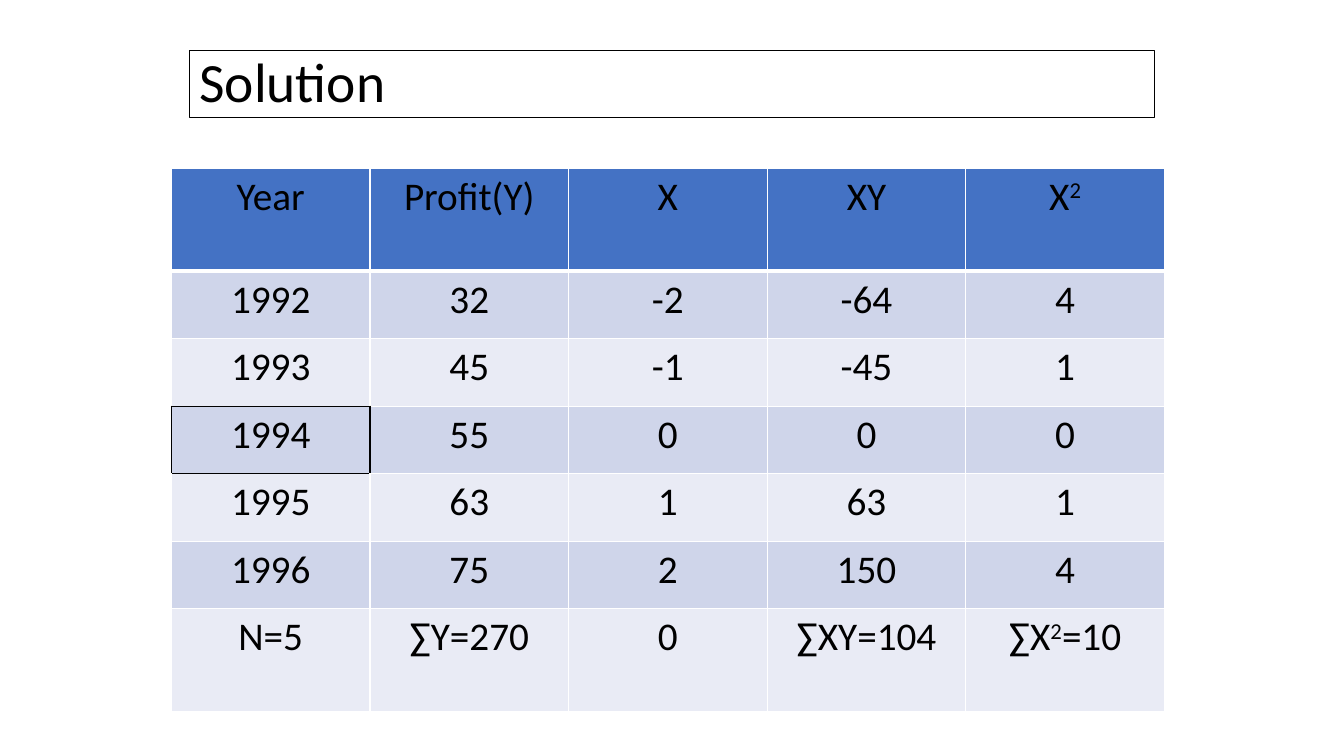
from dataclasses import dataclass

from lxml.etree import SubElement
from pptx import Presentation
from pptx.dml.color import RGBColor
from pptx.enum.text import MSO_ANCHOR, PP_ALIGN
from pptx.oxml.ns import qn
from pptx.util import Inches, Pt

BLACK = RGBColor(0x00, 0x00, 0x00)
WHITE = RGBColor(0xFF, 0xFF, 0xFF)
HEADER_BLUE = RGBColor(0x44, 0x72, 0xC4)
BAND_DARK = RGBColor(0xCF, 0xD5, 0xEA)
BAND_LIGHT = RGBColor(0xE9, 0xEB, 0xF5)

FONT = "Calibri"
COLUMN_WIDTH = 1.97
BASE_YEAR_CELL = (3, 0)
# Side of a cell -> step (row, column) to the neighbour sharing that edge
SIDES = {"lnL": (0, -1), "lnR": (0, 1), "lnT": (-1, 0), "lnB": (1, 0)}


@dataclass(frozen=True)
class TableRow:
    height: float
    fill: RGBColor
    texts: tuple[str, ...]  # "^" raises the one character after it


ROWS = [
    TableRow(1.02, HEADER_BLUE, ("Year", "Profit(Y)", "X", "XY", "X^2")),
    TableRow(0.67, BAND_DARK, ("1992", "32", "-2", "-64", "4")),
    TableRow(0.67, BAND_LIGHT, ("1993", "45", "-1", "-45", "1")),
    TableRow(0.67, BAND_DARK, ("1994", "55", "0", "0", "0")),
    TableRow(0.67, BAND_LIGHT, ("1995", "63", "1", "63", "1")),
    TableRow(0.67, BAND_DARK, ("1996", "75", "2", "150", "4")),
    TableRow(1.02, BAND_LIGHT, ("N=5", "∑Y=270", "0", "∑XY=104", "∑X^2=10")),
]


def add_run(paragraph, text: str, size: float, raised: bool = False) -> None:
    run = paragraph.add_run()
    run.text = text
    run.font.name = FONT
    run.font.size = Pt(size)
    run.font.color.rgb = BLACK
    if raised:
        run.font._element.set("baseline", "30000")


def add_title(slide) -> None:
    title = slide.shapes.add_textbox(Inches(1.88), Inches(0.5), Inches(9.57), Inches(0.67))
    title.line.color.rgb = BLACK
    title.line.width = Pt(0.75)
    frame = title.text_frame
    frame.word_wrap = True
    frame.vertical_anchor = MSO_ANCHOR.MIDDLE
    frame.paragraphs[0].line_spacing = 0.9
    add_run(frame.paragraphs[0], "Solution", 39.6)


def add_borders(cell, position: tuple[int, int]) -> None:
    """Draw white edges, black where they touch the base year's cell."""
    row, column = position
    properties = cell._tc.get_or_add_tcPr()
    for side, (down, across) in SIDES.items():
        neighbour = (row + down, column + across)
        color = BLACK if BASE_YEAR_CELL in (position, neighbour) else WHITE
        width = Pt(3) if row == 0 and side == "lnB" else Pt(1)
        line = SubElement(properties, qn(f"a:{side}"), w=str(width))
        fill = SubElement(line, qn("a:solidFill"))
        SubElement(fill, qn("a:srgbClr"), val=str(color))


def fill_cell(cell, text: str, fill: RGBColor) -> None:
    cell.fill.solid()
    cell.fill.fore_color.rgb = fill
    cell.margin_left = cell.margin_right = Inches(0.11)
    cell.margin_top = cell.margin_bottom = Inches(0.05)
    paragraph = cell.text_frame.paragraphs[0]
    paragraph.alignment = PP_ALIGN.CENTER
    base, _, rest = text.partition("^")
    add_run(paragraph, base, 28)
    if rest:
        add_run(paragraph, rest[0], 28, raised=True)
    if rest[1:]:
        add_run(paragraph, rest[1:], 28)


def add_trend_table(slide) -> None:
    column_count = len(ROWS[0].texts)
    table = slide.shapes.add_table(
        len(ROWS), column_count, Inches(1.7), Inches(1.67),
        Inches(column_count * COLUMN_WIDTH), Inches(sum(row.height for row in ROWS)),
    ).table
    for column in table.columns:
        column.width = Inches(COLUMN_WIDTH)
    for r, row in enumerate(ROWS):
        table.rows[r].height = Inches(row.height)
        for c, text in enumerate(row.texts):
            cell = table.cell(r, c)
            add_borders(cell, (r, c))
            fill_cell(cell, text, row.fill)


def main() -> None:
    presentation = Presentation()
    presentation.slide_width = Inches(13.33)
    presentation.slide_height = Inches(7.5)
    slide = presentation.slides.add_slide(presentation.slide_layouts[6])
    add_title(slide)
    add_trend_table(slide)
    presentation.save("out.pptx")


if __name__ == "__main__":
    main()
